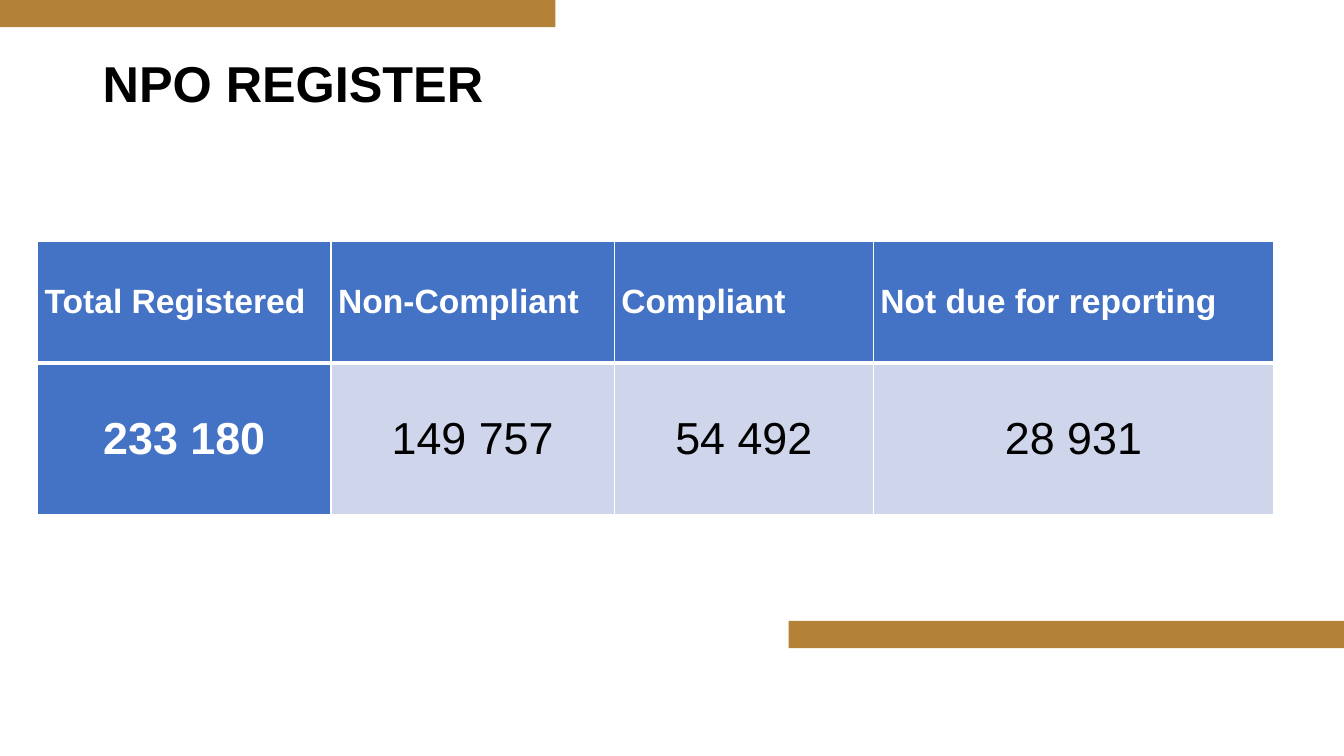
from pptx import Presentation
from pptx.dml.color import RGBColor
from pptx.enum.shapes import MSO_SHAPE
from pptx.enum.text import MSO_ANCHOR, PP_ALIGN
from pptx.oxml.ns import qn
from pptx.util import Inches, Pt
from lxml import etree

RECT = MSO_SHAPE.RECTANGLE
MID = MSO_ANCHOR.MIDDLE
LEFT, MIDDLE = PP_ALIGN.LEFT, PP_ALIGN.CENTER

HUES = {"gold": "B48138", "blue": "4472C4", "pale": "CFD5EA",
        "black": "000000", "white": "FFFFFF"}

# Text formats
TITLE = {"size": Pt(36), "bold": True, "hue": "black"}
HEAD = {"size": Pt(24), "bold": True, "hue": "white"}
TOTAL = {"size": Pt(32), "bold": True, "hue": "white"}
COUNT = {"size": Pt(32), "bold": False, "hue": "black"}

# Register figures, with column widths in percent of the slide
DATA = [("Total Registered", "233 180", 21.83),
        ("Non-Compliant", "149 757", 21.08),
        ("Compliant", "54 492", 19.28),
        ("Not due for reporting", "28 931", 29.78)]
ROWS = [16.13, 20.13]


class Deck:
    """Holds the style and the slide; lengths are percent of its size."""

    def __init__(self, font):
        self.font = font
        self.prs = Presentation()
        self.prs.slide_width = Inches(13.33)
        self.prs.slide_height = Inches(7.5)
        self.slide = self.prs.slides.add_slide(self.prs.slide_layouts[6])

    def wide(self, share):
        return round(self.prs.slide_width * share / 100)

    def high(self, share):
        return round(self.prs.slide_height * share / 100)

    def place(self, x, y, w, h):
        return self.wide(x), self.high(y), self.wide(w), self.high(h)

    def paint(self, fill, hue):
        fill.solid()
        fill.fore_color.rgb = RGBColor.from_string(HUES[hue])

    def bar(self, hue, *box):
        shape = self.slide.shapes.add_shape(RECT, *self.place(*box))
        shape.shadow.inherit = False
        self.paint(shape.fill, hue)
        shape.line.fill.background()

    def label(self, frame, text, form, align=LEFT):
        para = frame.paragraphs[0]
        para.alignment = align
        run = para.add_run()
        run.text = text
        run.font.name = self.font
        for key, value in form.items():
            if key == "hue":
                run.font.color.rgb = RGBColor.from_string(HUES[value])
            else:
                setattr(run.font, key, value)
        return para

    def title(self, text, *box):
        frame = self.slide.shapes.add_textbox(*self.place(*box)).text_frame
        frame.word_wrap = True
        frame.vertical_anchor = MID
        self.label(frame, text, TITLE).line_spacing = 0.9

    def edge(self, cell, sides):
        props = cell._tc.get_or_add_tcPr()
        for side, width in sides.items():
            line = etree.SubElement(props, qn("a:ln" + side), w=str(Pt(width)))
            fill = etree.SubElement(line, qn("a:solidFill"))
            etree.SubElement(fill, qn("a:srgbClr"), val=HUES["white"])

    def cell(self, cell, text, form, align, hue, sides):
        cell.margin_left = cell.margin_right = Inches(0.07)
        cell.margin_top = cell.margin_bottom = 0
        cell.vertical_anchor = MID
        self.edge(cell, sides)
        self.paint(cell.fill, hue)
        self.label(cell.text_frame, text, form, align)

    def table(self, x, y):
        total = sum(width for _, _, width in DATA)
        box = self.place(x, y, total, sum(ROWS))
        grid = self.slide.shapes.add_table(len(ROWS), len(DATA), *box).table
        for row, share in zip(grid.rows, ROWS):
            row.height = self.high(share)
        for col, (head, count, width) in enumerate(DATA):
            grid.columns[col].width = self.wide(width)
            form, hue = (COUNT, "pale") if col else (TOTAL, "blue")
            self.cell(grid.cell(0, col), head, HEAD, LEFT, "blue",
                      {"L": 1, "R": 1, "T": 1, "B": 3})
            self.cell(grid.cell(1, col), count, form, MIDDLE, hue,
                      {"L": 1, "R": 1, "T": 3, "B": 1})


def main():
    deck = Deck("Arial")
    # Gold bars at opposite corners
    for x, y in [(0, 0), (58.67, 82.13)]:
        deck.bar("gold", x, y, 41.33, 3.6)
    # Heading and register
    deck.title("NPO REGISTER", 6.9, 5.33, 86.25, 12.27)
    deck.table(2.8, 31.87)
    deck.prs.save("out.pptx")


if __name__ == "__main__":
    main()
